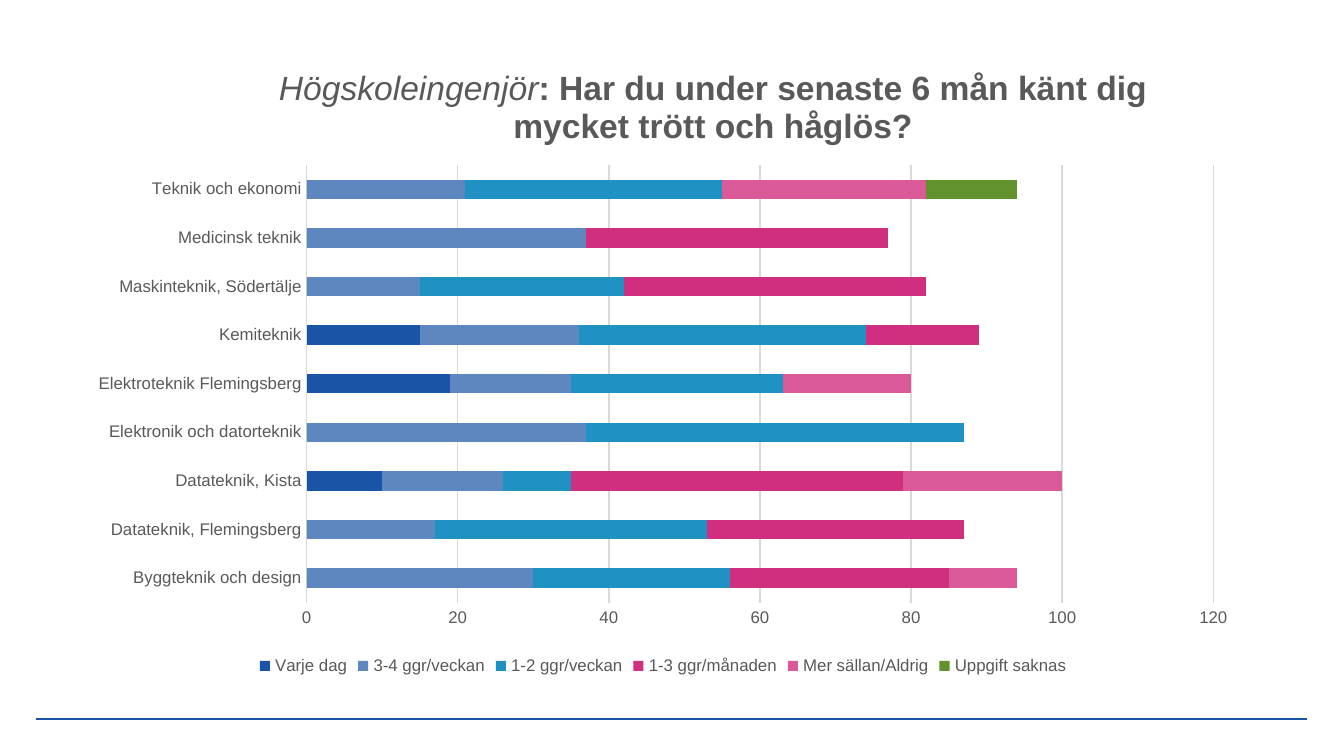
from lxml import etree
from pptx import Presentation
from pptx.chart.data import CategoryChartData
from pptx.dml.color import RGBColor
from pptx.enum.chart import XL_CHART_TYPE, XL_LEGEND_POSITION, XL_TICK_MARK
from pptx.enum.shapes import MSO_CONNECTOR
from pptx.oxml.ns import qn
from pptx.util import Emu, Pt

BAR_STACKED = XL_CHART_TYPE.BAR_STACKED
BOTTOM = XL_LEGEND_POSITION.BOTTOM
NO_TICK = XL_TICK_MARK.NONE
STRAIGHT = MSO_CONNECTOR.STRAIGHT

SCALE = 914400 / 134.4
FONT = "Arial"
GREY, GRID, BLUE = "595959", "D9D9D9", "1954A6"

CATEGORIES = [
    "Byggteknik och design", "Datateknik, Flemingsberg", "Datateknik, Kista",
    "Elektronik och datorteknik", "Elektroteknik Flemingsberg", "Kemiteknik",
    "Maskinteknik, Södertälje", "Medicinsk teknik", "Teknik och ekonomi",
]
SERIES = [
    ("Varje dag", BLUE, (0, 0, 10, 0, 19, 15, 0, 0, 0)),
    ("3-4 ggr/veckan", "5E87C0", (30, 17, 16, 37, 16, 21, 15, 37, 21)),
    ("1-2 ggr/veckan", "2091C3", (26, 36, 9, 50, 28, 38, 27, 0, 34)),
    ("1-3 ggr/månaden", "D02F80", (29, 34, 44, 0, 0, 15, 40, 40, 0)),
    ("Mer sällan/Aldrig", "D95999", (9, 0, 21, 0, 17, 0, 0, 0, 27)),
    ("Uppgift saknas", "61922E", (0, 0, 0, 0, 0, 0, 0, 0, 12)),
]
TITLE = [
    ("Högskoleingenjör", {"italic": True, "bold": False}),
    (": Har du under senaste 6 mån känt dig mycket trött och håglös?",
     {"italic": False, "bold": True}),
]


def px(n):
    return Emu(round(n * SCALE))


def rgb(value):
    return RGBColor.from_string(value)


def set_font(font, color=GREY, **formats):
    font.color.rgb = rgb(color)
    for name, value in {"name": FONT, **formats}.items():
        setattr(font, name, value)


def set_line(line, color, width):
    line.color.rgb = rgb(color)
    line.width = Pt(width)


def add_rule(s, x1, y1, x2, y2):
    line = s.shapes.add_connector(STRAIGHT, px(x1), px(y1), px(x2), px(y2))
    set_line(line.line, BLUE, 1)
    etree.SubElement(line._element.spPr, qn("a:effectLst"))


def set_layout(parent, index, **values):
    """Place a chart part by fractions of the chart's size."""
    for old in parent.findall(qn("c:layout")):
        parent.remove(old)
    layout = etree.Element(qn("c:layout"))
    parent.insert(index, layout)
    manual = etree.SubElement(layout, qn("c:manualLayout"))
    for tag, value in values.items():
        etree.SubElement(manual, qn(f"c:{tag}")).set("val", str(value))


def add_title(chart):
    tf = chart.chart_title.text_frame
    p = tf.paragraphs[0]
    for text, formats in TITLE:
        r = p.add_run()
        r.text = text
        set_font(r.font, size=Pt(18), **formats)
    chart.chart_title.include_in_layout = False
    set_layout(chart.chart_title._element, 1,
               xMode="edge", yMode="edge", x=0.17, y=0.03)


def style_axes(chart):
    for axis in (chart.category_axis, chart.value_axis):
        axis.major_tick_mark = axis.minor_tick_mark = NO_TICK
        set_font(axis.tick_labels.font, size=Pt(9))
    set_line(chart.category_axis.format.line, GRID, 0.75)
    axis = chart.value_axis
    axis.minimum_scale, axis.maximum_scale, axis.major_unit = 0, 120, 20
    axis.format.line.fill.background()
    set_line(axis.major_gridlines.format.line, GRID, 0.75)


def add_bar_chart(s, x, y, w, h):
    data = CategoryChartData()
    data.categories = CATEGORIES
    for name, _, values in SERIES:
        data.add_series(name, values)
    chart = s.shapes.add_chart(BAR_STACKED, px(x), px(y), px(w), px(h), data).chart
    set_font(chart.font, "000000", size=Pt(10))

    # Bars
    plot = chart.plots[0]
    plot.gap_width, plot.overlap, plot.vary_by_categories = 150, 100, False
    for series, (_, color, _) in zip(plot.series, SERIES):
        series.format.fill.solid()
        series.format.fill.fore_color.rgb = rgb(color)
        series.invert_if_negative = False

    # Title, axes and legend
    add_title(chart)
    style_axes(chart)
    chart.has_legend = True
    chart.legend.position = BOTTOM
    chart.legend.include_in_layout = False
    set_font(chart.legend.font, size=Pt(9))
    plot_area = chart._chartSpace.chart.plotArea
    set_layout(plot_area, 0, layoutTarget="inner", xMode="edge", yMode="edge",
               x=0.197, y=0.19, w=0.771, h=0.687)


def main():
    prs = Presentation()
    prs.slide_width, prs.slide_height = px(1344), px(756)
    s = prs.slides.add_slide(prs.slide_layouts[6])
    add_rule(s, 36, 719, 1307, 719)
    add_bar_chart(s, 75, 44, 1176, 637)
    prs.save("out.pptx")


if __name__ == "__main__":
    main()
